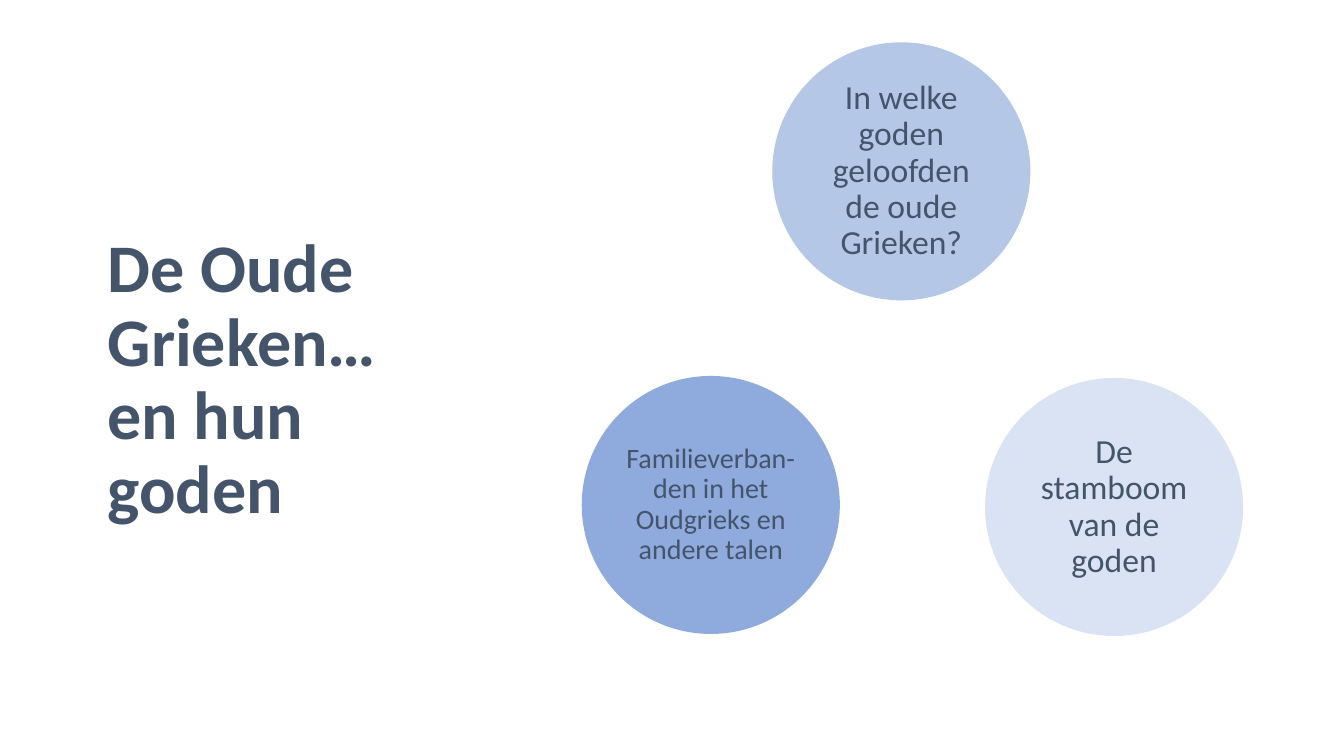
"""Build a slide with a title and three themed circles."""
import pptx
import pptx.dml.color
import pptx.enum.shapes
import pptx.enum.text
import pptx.util

Inches = pptx.util.Inches
ALIGN = pptx.enum.text.PP_ALIGN
ANCHOR = pptx.enum.text.MSO_ANCHOR
COLORS = {"text": "44546A", "mid": "B4C7E7", "dark": "8FAADC", "pale": "DAE3F3"}
SIZE = 2.56
CIRCLES = [
    (7.66, 0.42, "mid", 24, "In welke goden geloofden de oude Grieken?"),
    (5.77, 3.73, "dark", 20, "Familieverban-den in het Oudgrieks en andere talen"),
    (9.77, 3.75, "pale", 24, "De stamboom van de goden"),
]


def color(name):
    """Return the named colour."""
    return pptx.dml.color.RGBColor.from_string(COLORS[name])


def apply(item, form):
    """Set every attribute in a dict of format values."""
    for key, value in form.items():
        setattr(item, key, value)


def write(shape, lines, size, bold, align, anchor, inset):
    """Write lines of text as one paragraph."""
    frame = shape.text_frame
    sides = ("margin_left", "margin_top", "margin_right", "margin_bottom")
    apply(frame, dict(zip(sides, map(Inches, inset))))
    apply(frame, {"word_wrap": True, "vertical_anchor": anchor})
    para = frame.paragraphs[0]
    apply(para, {"alignment": align, "line_spacing": 0.9})
    for i, line in enumerate(lines):
        if i:
            para.add_line_break()
        para.add_run().text = line
    apply(para.font, {"name": "Calibri", "size": pptx.util.Pt(size), "bold": bold})
    para.font.color.rgb = color("text")
    for run in para.runs:
        apply(run.font, {"name": "Calibri", "size": pptx.util.Pt(size), "bold": bold})
        run.font.color.rgb = color("text")


def title(slide, lines):
    """Add the title."""
    box = slide.shapes.add_textbox(*map(Inches, (0.97, 2.27, 3.99, 2.92)))
    write(box, lines, 48.6, True, ALIGN.LEFT, ANCHOR.TOP, (0.1, 0.05, 0.1, 0.05))


def circle(slide, left, top, fill, size, text):
    """Add a filled circle with centred text."""
    oval = pptx.enum.shapes.MSO_SHAPE.OVAL
    shape = slide.shapes.add_shape(oval, *map(Inches, (left, top, SIZE, SIZE)))
    shape.shadow.inherit = False
    shape.fill.solid()
    shape.fill.fore_color.rgb = color(fill)
    shape.line.fill.background()
    write(shape, [text], size, False, ALIGN.CENTER, ANCHOR.MIDDLE, [0.03] * 4)


def main():
    """Build and save the slide."""
    deck = pptx.Presentation()
    apply(deck, {"slide_width": Inches(13.33), "slide_height": Inches(7.5)})
    slide = deck.slides.add_slide(deck.slide_layouts[6])
    title(slide, ["De Oude Grieken…", "en hun goden"])
    for item in CIRCLES:
        circle(slide, *item)
    deck.save("out.pptx")


if __name__ == "__main__":
    main()
